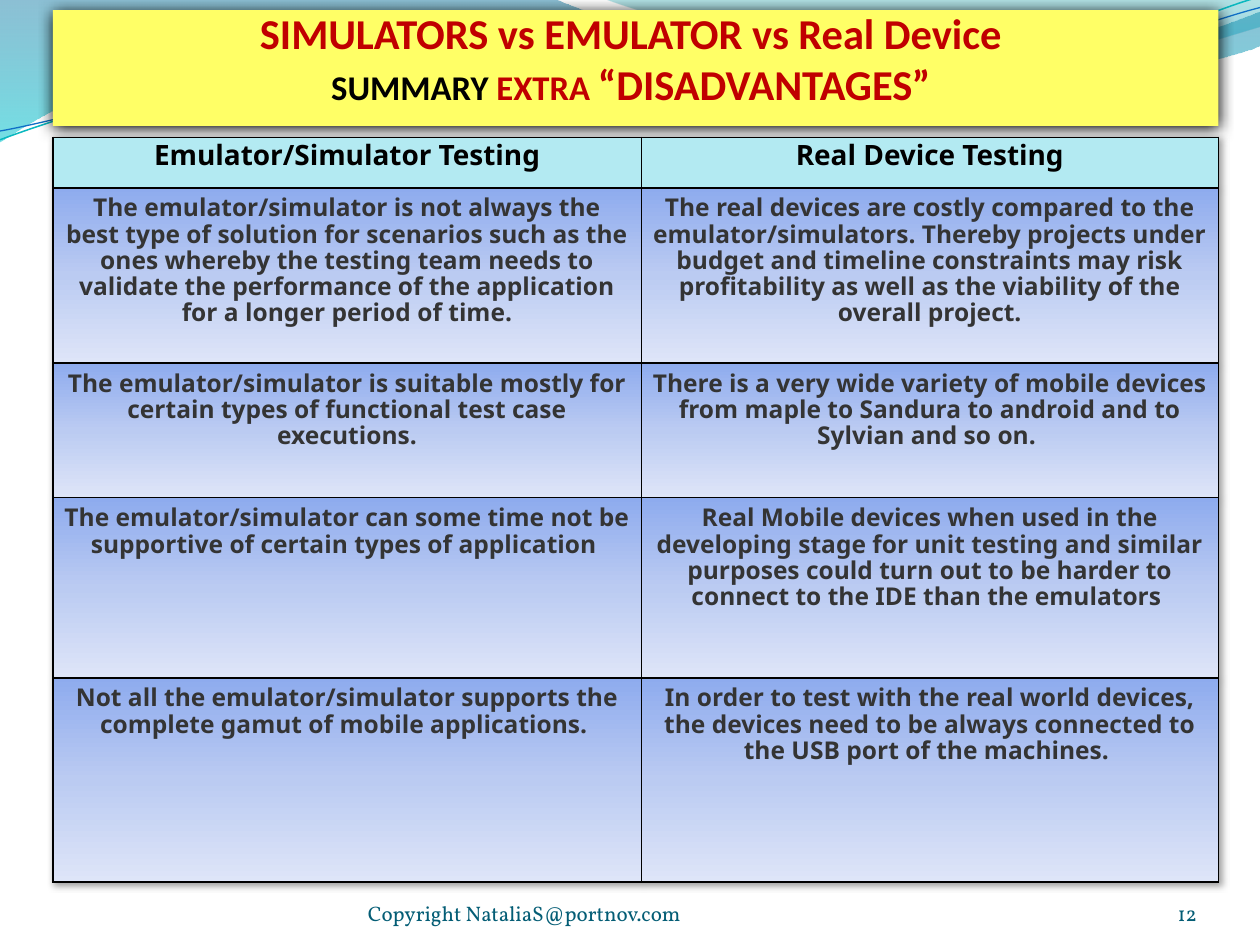
"""Build a slide comparing the disadvantages of emulators and real devices."""
from pptx import Presentation
from pptx.dml.color import RGBColor
from pptx.enum import text
from pptx.oxml import parse_xml
from pptx.oxml.ns import nsdecls
from pptx.util import Inches, Pt

COLORS = {
    "yellow": "FFFF66", "red": "C00000", "black": "000000", "body": "343434",
    "header": "B3EAF2", "footer": "045D75", "aqua": "0AB8BF", "blue": "0F6FC6",
}
CELL_STOPS = [(0, "8EABEE", 100), (50, "BBCBF2", 100), (100, "DEE5F8", 100)]
WAVES = [
    {"start": (0, 0),
     "steps": [(4.4, -0.01), (4.76, 0.17, 6.64, 0.63, 7.58, 0.63),
               (8.53, 0.63, 9.58, 0.26, 10, 0.09), (10.01, 0.36),
               (9.83, 0.44, 8.7, 0.76, 7.46, 0.75),
               (6.22, 0.75, 3.82, 0.28, 2.57, 0.34),
               (1.29, 0.36, 0.46, 0.83, -0.01, 1.13)],
     "stops": [(0, "0074A1", 45), (100, "00C6CF", 55)]},
    {"start": (4.79, -0.01),
     "steps": [(5.09, 0.11, 6.82, 0.62, 7.69, 0.65),
               (8.56, 0.69, 9.61, 0.32, 10, 0.21), (10, 0)],
     "stops": [(0, "00A1A9", 30), (80, "008BBF", 45)]},
    {"start": (0, 1.11),
     "steps": [(0.48, 0.93, 1.58, 0.57, 2.77, 0.52),
               (3.95, 0.47, 5.93, 0.89, 7.13, 0.8),
               (8.33, 0.71, 9.38, 0.15, 9.98, -0.02)],
     "line": ("aqua", 0.85)},
    {"start": (0, 1.04),
     "steps": [(0.47, 0.96, 1.64, 0.61, 2.83, 0.56),
               (4.03, 0.51, 5.97, 0.84, 7.17, 0.75),
               (8.36, 0.67, 9.41, 0.21, 10, 0.06)],
     "line": ("blue", 0.75)},
]
TITLE = [
    [("SIMULATORS vs EMULATOR vs Real Device ", 24.3, "red")],
    [("SUMMARY ", 19.8, "black"), ("EXTRA ", 19.8, "red"),
     ("“DISADVANTAGES” ", 24.3, "red")],
]
ROWS = [
    ("Emulator/Simulator Testing", "Real Device Testing"),
    ("The emulator/simulator is not always the\nbest type of solution for scenarios such as the "
     "ones whereby the testing team needs to validate the performance of the application for a "
     "longer period of time.",
     "The real devices are costly compared to the emulator/simulators. Thereby projects under "
     "budget and timeline constraints may risk profitability as well as the viability of the "
     "overall project."),
    ("The emulator/simulator is suitable mostly for certain types of functional test case "
     "executions.",
     "There is a very wide variety of mobile devices from maple to Sandura to android and to "
     "Sylvian and so on. "),
    ("The emulator/simulator can some time not be supportive of certain types of application ",
     "Real Mobile devices when used in the developing stage for unit testing and similar "
     "purposes could turn out to be harder to connect to the IDE than the emulators "),
    ("Not all the emulator/simulator supports the complete gamut of mobile applications. ",
     "In order to test with the real world devices, the devices need to be always connected to "
     "the USB port of the machines. "),
]
COLUMN_WIDTHS = [4.67, 4.58]
ROW_HEIGHTS = [0.4, 1.39, 1.07, 1.43, 1.62]
FOOTERS = [
    ("Copyright NataliaS@portnov.com", 2.92, 3.67, text.PP_ALIGN.LEFT),
    ("12", 8.67, 0.83, text.PP_ALIGN.RIGHT),
]


def rgb(name):
    return RGBColor.from_string(COLORS[name])


def gradient(stops):
    marks = "".join(
        f'<a:gs pos="{place * 1000}"><a:srgbClr val="{color}">'
        f'<a:alpha val="{alpha * 1000}"/></a:srgbClr></a:gs>'
        for place, color, alpha in stops)
    return parse_xml(f'<a:gradFill {nsdecls("a")} rotWithShape="1"><a:gsLst>{marks}</a:gsLst>'
                     '<a:lin ang="5400000" scaled="0"/></a:gradFill>')


def shadow(blur, distance, angle, alpha):
    return parse_xml(
        f'<a:effectLst {nsdecls("a")}><a:outerShdw blurRad="{Pt(blur)}" dist="{Pt(distance)}" '
        f'dir="{angle * 60000}" rotWithShape="0"><a:srgbClr val="{COLORS["black"]}">'
        f'<a:alpha val="{alpha * 1000}"/></a:srgbClr></a:outerShdw></a:effectLst>')


def add_wave(slide, wave):
    steps = [list(zip(step[::2], step[1::2])) for step in wave["steps"]]
    builder = slide.shapes.build_freeform(*(round(v * 100) for v in wave["start"]),
                                          scale=Inches(0.01))
    builder.add_line_segments([(round(x * 100), round(y * 100)) for step in steps
                               for x, y in step], close="stops" in wave)
    shape = builder.convert_to_shape()
    shape.shadow.inherit = False
    segments = iter(shape._element.findall(".//{*}lnTo"))
    for step in steps:
        group = [next(segments) for _ in step]
        if len(group) == 3:
            curve = parse_xml(f'<a:cubicBezTo {nsdecls("a")}/>')
            group[0].addprevious(curve)
            for segment in group:
                curve.append(segment[0])
                segment.getparent().remove(segment)
    if "stops" in wave:
        shape.line.fill.background()
        shape._element.spPr.find("{*}custGeom").addnext(gradient(wave["stops"]))
    else:
        color, width = wave["line"]
        shape.fill.background()
        shape.line.color.rgb = rgb(color)
        shape.line.width = Pt(width)


def add_run(paragraph, words, size, color, font, bold=False):
    run = paragraph.add_run()
    run.text = words
    run.font.name, run.font.size, run.font.bold = font, Pt(size), bold
    run.font.color.rgb = rgb(color)


def set_frame(frame, anchor):
    frame.word_wrap = True
    frame.auto_size = text.MSO_AUTO_SIZE.NONE
    frame.vertical_anchor = anchor
    frame.margin_left = frame.margin_right = frame.margin_top = frame.margin_bottom = 0


def fill_title(slide):
    title = slide.shapes.title
    title.left, title.top, title.width, title.height = map(Inches, (0.42, 0.08, 9.25, 0.92))
    title.fill.solid()
    title.fill.fore_color.rgb = rgb("yellow")
    title._element.spPr.append(shadow(8.5, 1, 90, 100))
    slide.shapes._spTree.append(title._element)
    frame = title.text_frame
    set_frame(frame, text.MSO_ANCHOR.MIDDLE)
    frame.margin_bottom = Inches(0.16)
    for index, runs in enumerate(TITLE):
        paragraph = frame.add_paragraph() if index else frame.paragraphs[0]
        paragraph.alignment = text.PP_ALIGN.CENTER
        paragraph.space_before = Pt(0)
        for words, size, color in runs:
            add_run(paragraph, words, size, color, "Calibri", True)


def fill_cell(cell, words, is_header):
    cell.margin_left = cell.margin_right = cell.margin_top = cell.margin_bottom = Inches(0.08)
    paragraph = cell.text_frame.paragraphs[0]
    paragraph.alignment = text.PP_ALIGN.CENTER
    paragraph.line_spacing, paragraph.space_after = Pt(15), Pt(11.2)
    size, color = (16, "black") if is_header else (14, "body")
    for index, line in enumerate(words.split("\n")):
        if index:
            paragraph.add_line_break()
        add_run(paragraph, line, size, color, "Noto Sans", True)
    properties = cell._tc.get_or_add_tcPr()
    if is_header:
        cell.fill.solid()
        cell.fill.fore_color.rgb = rgb("header")
    else:
        properties.append(gradient(CELL_STOPS))
    for index, side in enumerate("LRTB"):
        properties.insert(index, parse_xml(
            f'<a:ln{side} {nsdecls("a")} w="{Pt(1)}"><a:solidFill>'
            f'<a:srgbClr val="{COLORS["black"]}"/></a:solidFill></a:ln{side}>'))


def add_comparison(slide):
    table = slide.shapes.add_table(
        len(ROWS), len(COLUMN_WIDTHS), Inches(0.42), Inches(1.09),
        Inches(sum(COLUMN_WIDTHS)), Inches(sum(ROW_HEIGHTS))).table
    table.horz_banding = False
    table._tbl.tblPr.insert(0, shadow(4, 2, 45, 40))
    for column, width in zip(table.columns, COLUMN_WIDTHS):
        column.width = Inches(width)
    for index, (row, height) in enumerate(zip(table.rows, ROW_HEIGHTS)):
        row.height = Inches(height)
        for cell, words in zip(row.cells, ROWS[index]):
            fill_cell(cell, words, index == 0)


def main():
    presentation = Presentation()
    presentation.slide_width, presentation.slide_height = Inches(10), Inches(7.5)
    slide = presentation.slides.add_slide(presentation.slide_layouts[5])
    for wave in WAVES:
        add_wave(slide, wave)
    fill_title(slide)
    for words, left, width, alignment in FOOTERS:
        frame = slide.shapes.add_textbox(
            Inches(left), Inches(6.95), Inches(width), Inches(0.4)).text_frame
        set_frame(frame, text.MSO_ANCHOR.BOTTOM)
        frame.paragraphs[0].alignment = alignment
        add_run(frame.paragraphs[0], words, 12, "footer", "Vollkorn")
    add_comparison(slide)
    presentation.save("out.pptx")


if __name__ == "__main__":
    main()
